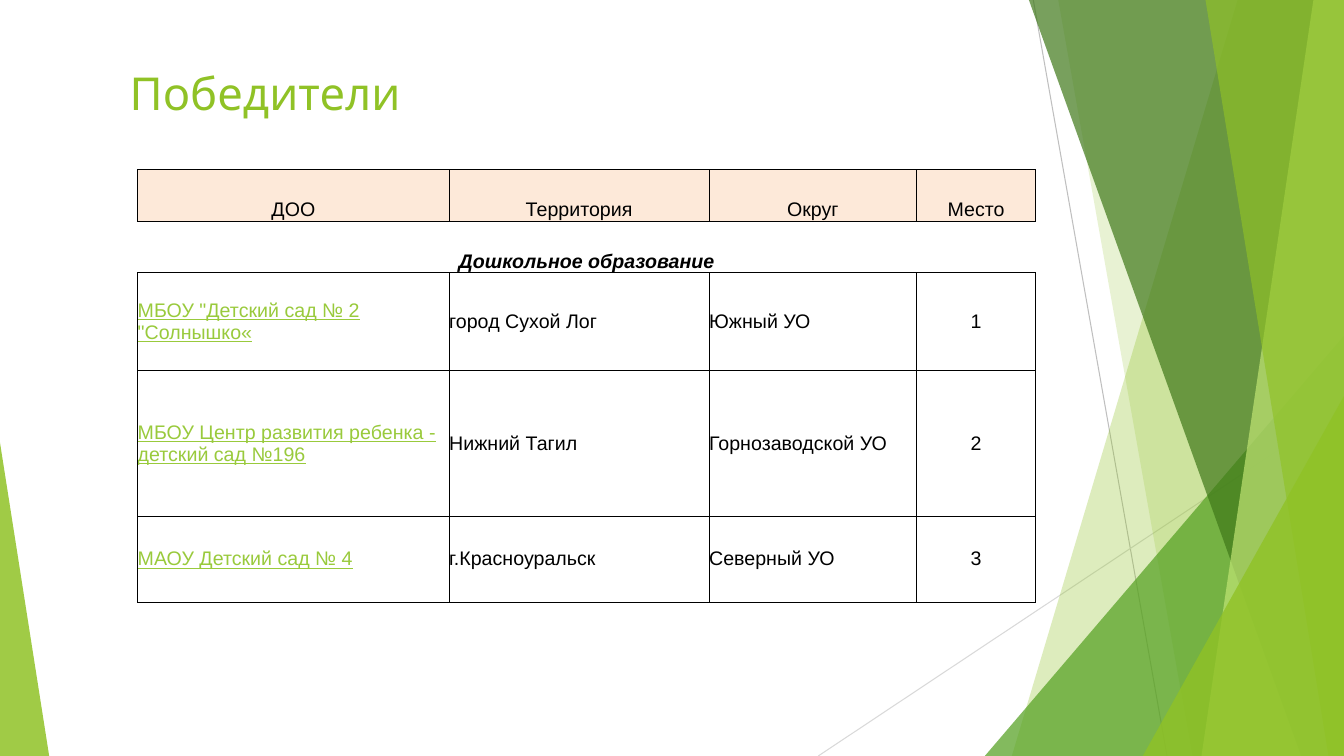
import lxml.etree
import pptx
import pptx.dml.color
import pptx.enum.shapes
import pptx.enum.text
import pptx.oxml.ns
import pptx.util

Cm = pptx.util.Cm
Pt = pptx.util.Pt
qn = pptx.oxml.ns.qn
ALIGN = pptx.enum.text.PP_ALIGN
ANCHOR = pptx.enum.text.MSO_ANCHOR
RIGHT, BOTTOM = 33.87, 19.05


def rgb(value):
    return pptx.dml.color.RGBColor.from_string(value)


def format_span(span, font, size, colour):
    span.font.name = font
    span.font.size = Pt(size)
    span.font.color.rgb = rgb(colour)


deck = pptx.Presentation()
deck.slide_width = Cm(RIGHT)
deck.slide_height = Cm(BOTTOM)
page = deck.slides.add_slide(deck.slide_layouts[6])

rays = [
    (26.04, 0, 29.41, BOTTOM, "BFBFBF"),
    (RIGHT, 10.24, 20.62, BOTTOM, "D9D9D9"),
]
for x1, y1, x2, y2, colour in rays:
    ray = page.shapes.add_connector(
        pptx.enum.shapes.MSO_CONNECTOR.STRAIGHT, Cm(x1), Cm(y1), Cm(x2), Cm(y2))
    ray.line.color.rgb = rgb(colour)
    ray.line.width = Pt(0.75)
    lxml.etree.SubElement(ray.element.spPr, qn("a:effectLst"))

# Strips hold top and bottom x; triangles hold left, top, width and apex.
facets = [
    ("90C226", 30, (31.19, 25.5)),
    ("90C226", 20, (26.67, 30.05)),
    ("54A021", 72, (24.82, 8.46, 9.05, 1)),
    ("3F7819", 70, (25.93, 32.79)),
    ("C0E474", 70, (33.1, 30.28)),
    ("90C226", 65, (30.38, 33.48)),
    ("90C226", 80, (28.8, 9.98, 5.07, 1)),
    ("90C226", 85, (0, 11.15, 1.24, 0)),
]
for colour, opacity, outline in facets:
    if len(outline) == 2:
        top_x, bottom_x = outline
        builder = page.shapes.build_freeform(Cm(top_x), Cm(0))
        builder.add_line_segments(
            [(Cm(RIGHT), Cm(0)), (Cm(RIGHT), Cm(BOTTOM)), (Cm(bottom_x), Cm(BOTTOM))])
        facet = builder.convert_to_shape()
    else:
        left, top, width, apex = outline
        facet = page.shapes.add_shape(
            pptx.enum.shapes.MSO_SHAPE.ISOSCELES_TRIANGLE,
            Cm(left), Cm(top), Cm(width), Cm(BOTTOM - top))
        facet.adjustments[0] = apex
    facet.shadow.inherit = False
    facet.line.fill.background()
    facet.fill.solid()
    facet.fill.fore_color.rgb = rgb(colour)
    tint = facet.element.spPr.find(qn("a:solidFill"))[0]
    lxml.etree.SubElement(tint, qn("a:alpha"), val=str(opacity * 1000))

title = page.shapes.add_textbox(Cm(3.02), Cm(1.55), Cm(22.86), Cm(1.55))
title.text_frame.word_wrap = True
title.text_frame.vertical_anchor = ANCHOR.MIDDLE
title.text_frame.margin_top = title.text_frame.margin_bottom = 0
title.text_frame.text = "Победители"
format_span(title.text_frame.paragraphs[0].runs[0], "Cabin", 32.4, "90C226")

rows = [
    ("ДОО", "Территория", "Округ", "Место"),
    ("Дошкольное образование", "", "", ""),
    ('МБОУ "Детский сад № 2 "Солнышко«', "город Сухой Лог", "Южный УО", "1"),
    ("МБОУ Центр развития ребенка - детский сад №196", "Нижний Тагил",
     "Горнозаводской УО", "2"),
    ("МАОУ Детский сад № 4", "г.Красноуральск", "Северный УО", "3"),
]
widths = [7.85, 6.55, 5.23, 3]
heights = [1.3, 1.3, 2.46, 3.68, 2.16]
HEADER, SECTION = 0, 1
table = page.shapes.add_table(
    len(rows), len(widths), Cm(3.47), Cm(4.27), Cm(sum(widths)), Cm(sum(heights))).table
table.first_row = False
table.horz_banding = False
for column, width in zip(table.columns, widths):
    column.width = Cm(width)
for row, height in zip(table.rows, heights):
    row.height = Cm(height)
table.cell(SECTION, 0).merge(table.cell(SECTION, len(widths) - 1))

for r, texts in enumerate(rows):
    for c, text in enumerate(texts):
        cell = table.cell(r, c)
        cell.margin_left = cell.margin_right = cell.margin_top = cell.margin_bottom = 0
        cell.vertical_anchor = ANCHOR.BOTTOM if r <= SECTION else ANCHOR.MIDDLE
        properties = cell._tc.get_or_add_tcPr()
        for side in ("lnL", "lnR", "lnT", "lnB"):
            border = lxml.etree.SubElement(properties, qn("a:" + side), w=str(Pt(0.5)))
            if r == SECTION and side in ("lnL", "lnR"):
                lxml.etree.SubElement(border, qn("a:noFill"))
            else:
                paint = lxml.etree.SubElement(border, qn("a:solidFill"))
                lxml.etree.SubElement(paint, qn("a:srgbClr"), val="000000")
        if r == HEADER:
            cell.fill.solid()
            cell.fill.fore_color.rgb = rgb("FDE9D9")
        else:
            cell.fill.background()
        if not text:
            continue
        para = cell.text_frame.paragraphs[0]
        para.text = text
        centred = r <= SECTION or c == len(widths) - 1
        para.alignment = ALIGN.CENTER if centred else ALIGN.LEFT
        span = para.runs[0]
        linked = r > SECTION and c == 0
        format_span(span, "Arial", 14, "99CA3C" if linked else "000000")
        span.font.underline = linked
        span.font.bold = span.font.italic = r == SECTION

deck.save("out.pptx")
